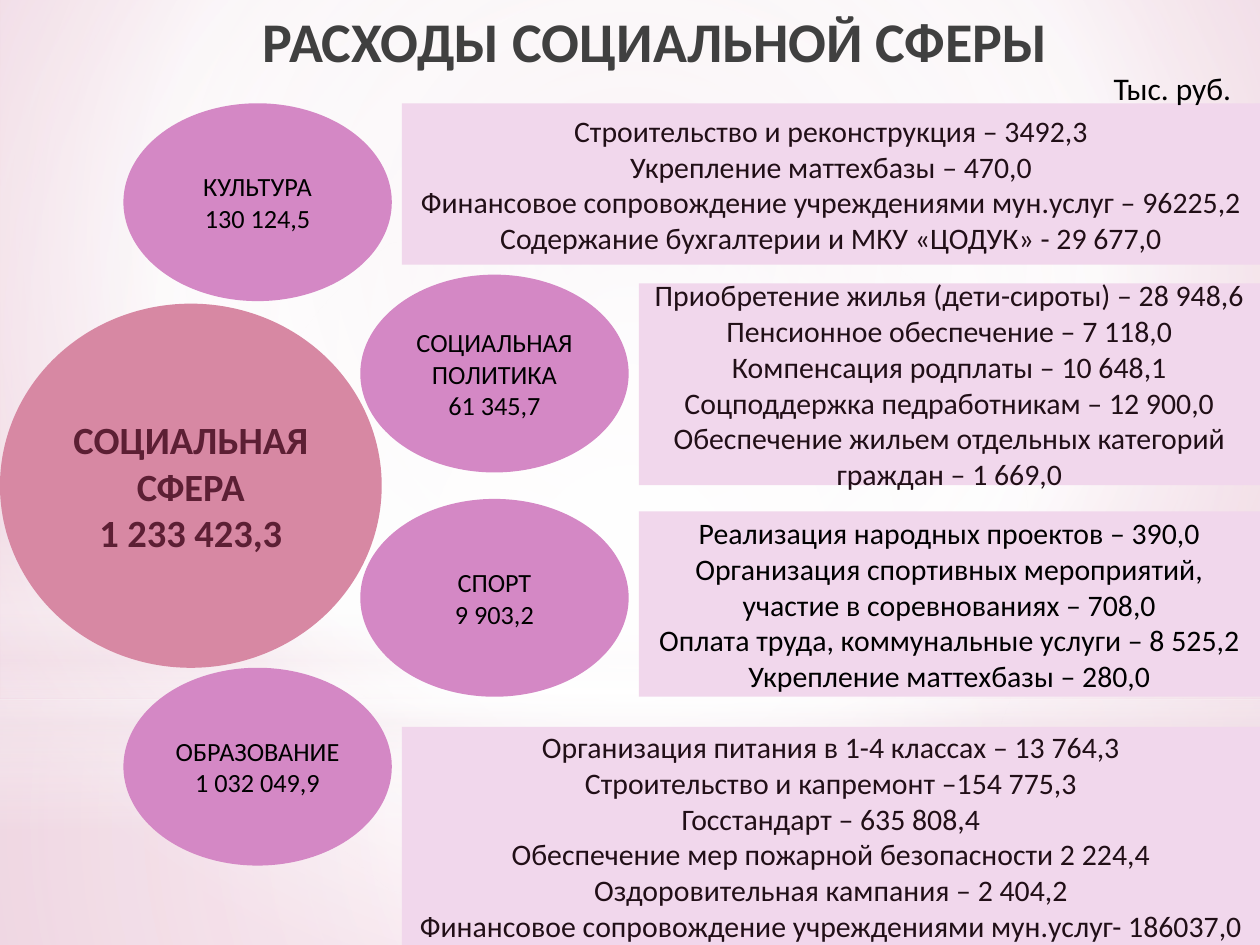
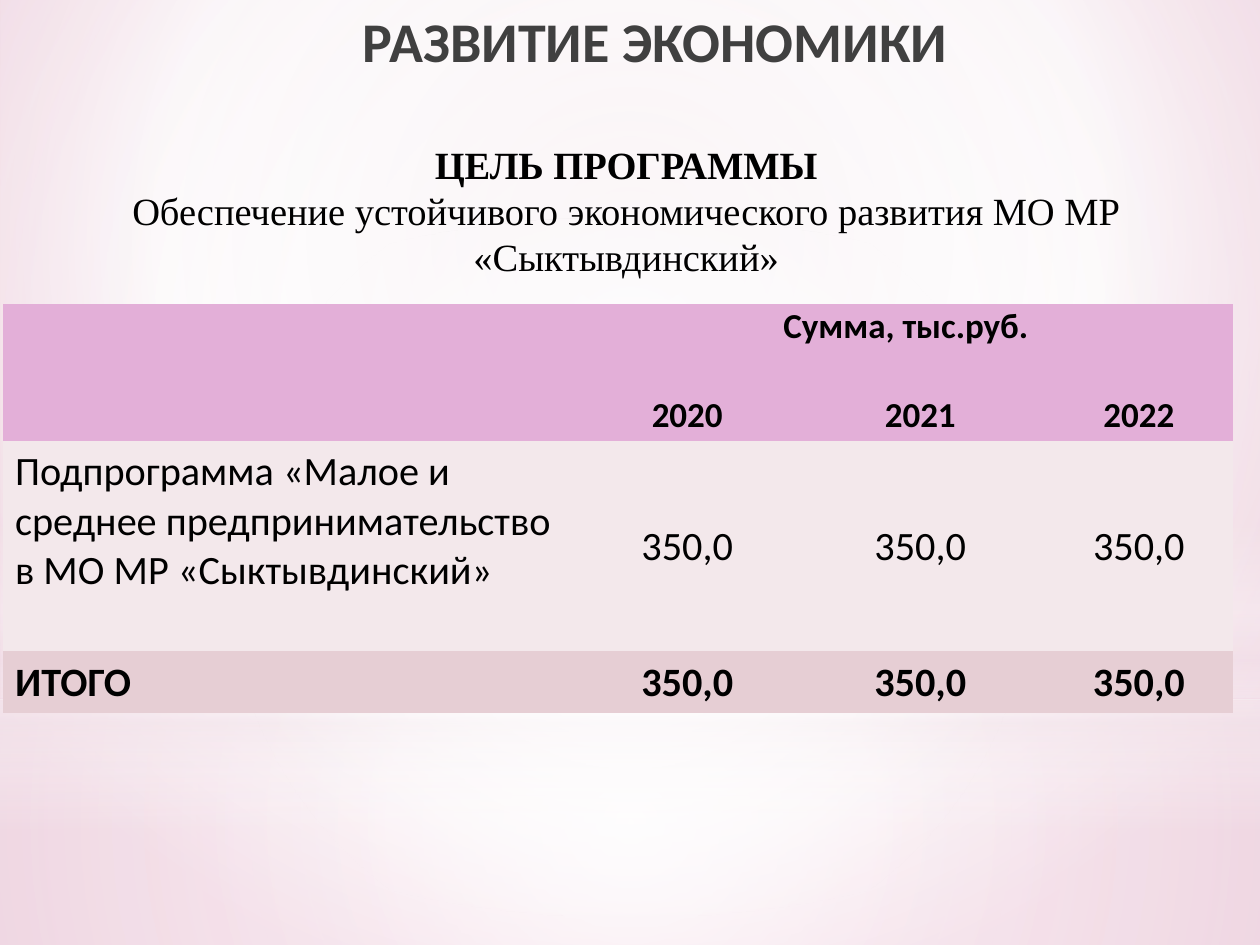
from collections import namedtuple

from pptx import Presentation
from pptx.dml.color import RGBColor
from pptx.enum.shapes import MSO_SHAPE as Form
from pptx.enum.text import MSO_ANCHOR as Anchor, PP_ALIGN as Align
from pptx.oxml import parse_xml
from pptx.oxml.ns import nsdecls, qn
from pptx.util import Inches, Pt

SANS, SERIF = "Calibri", "Times New Roman"
BLACK, GREY, INK, WINE = "000000", "404040", "210F17", "5C1F34"
ROSE, ORCHID, BLUSH = "D788A3", "D488C5", "F1D7EC"
HEAD, BODY, TOTAL = "E3AFD8", "F3E8EB", "E6CED4"
WHITE, HAZE = "FFFFFF", "F4E7ED"
PLAIN_GRID = "{2D5ABB26-0587-4C30-8999-92F81FD0307C}"


class Box(namedtuple("Box", "x y w h")):
    """A rectangle in inches."""

    def share(self, x, y, w, h):
        """Return the area given as shares of this box."""
        return Box(self.x + x * self.w, self.y + y * self.h, w * self.w, h * self.h)

    def emu(self):
        return [Inches(v) for v in self]


PAGE = Box(0, 0, 10, 7.5)
BUBBLE = (2.13, 1.57)
REACH = 2.21  # from the left of a bubble to its panel

# Backdrop layers: form, top and height as shares, stops, centred or vertical
LAYERS = [
    (Form.RECTANGLE, 0.74, 0.26, [(0, WHITE, 91), (37, WHITE, 76), (100, HAZE, 79)], True),
    (Form.RECTANGLE, 0, 0.74, [(0, WHITE, 89), (48, WHITE, 62), (100, HAZE, 79)], True),
    (Form.RECTANGLE, 0.55, 0.33, [(0, WHITE, 0), (29, WHITE, 30), (45, HAZE, 40),
                                  (55, WHITE, 26), (65, HAZE, 60), (100, WHITE, 0)], False),
    (Form.OVAL, 0.23, 0.74, [(0, WHITE, 100), (56, WHITE, 0)], True),
]

# Left, top, bubble lines, panel drop, panel height, panel ink, panel lines
BRANCHES = [
    (0.98, 0.82, ["КУЛЬТУРА", "130 124,5"], 0, 1.28, INK, [
        "Строительство и реконструкция – 3492,3",
        "Укрепление маттехбазы – 470,0",
        "Финансовое сопровождение учреждениями мун.услуг – 96225,2",
        "Содержание бухгалтерии и МКУ «ЦОДУК» - 29 677,0"]),
    (2.86, 2.18, ["СОЦИАЛЬНАЯ ПОЛИТИКА", "61 345,7"], 0.07, 1.6, INK, [
        "Приобретение жилья (дети-сироты) – 28 948,6",
        "Пенсионное обеспечение – 7 118,0",
        "Компенсация родплаты – 10 648,1",
        "Соцподдержка педработникам – 12 900,0",
        "Обеспечение жильем отдельных категорий граждан – 1 669,0"]),
    (2.86, 3.96, ["СПОРТ", "9 903,2"], 0.1, 1.47, BLACK, [
        "Реализация народных проектов – 390,0",
        "Организация спортивных мероприятий, участие в соревнованиях – 708,0",
        "Оплата труда, коммунальные услуги – 8 525,2",
        "Укрепление маттехбазы – 280,0"]),
    (0.98, 5.3, ["ОБРАЗОВАНИЕ 1 032 049,9"], 0.47, 1.73, INK, [
        "Организация питания в 1-4 классах – 13 764,3",
        "Строительство и капремонт –154 775,3",
        "Госстандарт – 635 808,4",
        "Обеспечение мер пожарной безопасности 2 224,4",
        "Оздоровительная кампания – 2 404,2",
        "Финансовое сопровождение учреждениями мун.услуг- 186037,0"]),
]

ROWS = [
    ["", "Сумма, тыс.руб.", "", ""],
    ["", "2020", "2021", "2022"],
    ["Подпрограмма «Малое и среднее предпринимательство в МО МР «Сыктывдинский»"]
    + ["350,0"] * 3,
    ["ИТОГО"] + ["350,0"] * 3,
]
# Height, fill, text size, bold
STYLES = [(0.67, HEAD, 20, True), (0.42, HEAD, 20, True),
          (1.67, BODY, 23, False), (0.49, TOTAL, 23, True)]
COLS = [4.57, 1.73, 1.97, 1.5]


def tint(code):
    return RGBColor.from_string(code)


def blend(fill, node, stops, rect=None):
    """Give a fill a gradient: round into rect (l, t, r, b in %), else vertical."""
    fill.solid()
    marks = "".join(
        f'<a:gs pos="{pos * 1000}"><a:srgbClr val="{code}">'
        f'<a:alpha val="{alpha * 1000}"/></a:srgbClr></a:gs>'
        for pos, code, alpha in stops)
    if rect:
        sides = " ".join(f'{side}="{v * 1000}"' for side, v in zip("ltrb", rect))
        way = f'<a:path path="circle"><a:fillToRect {sides}/></a:path>'
    else:
        way = '<a:lin ang="5400000" scaled="0"/>'
    flat = node.find(".//" + qn("a:solidFill"))
    flat.getparent().replace(flat, parse_xml(
        f'<a:gradFill {nsdecls("a")} rotWithShape="1"><a:gsLst>{marks}</a:gsLst>{way}</a:gradFill>'))


def write(frame, lines, size, ink=BLACK, bold=False, face=SANS,
          align=Align.CENTER, anchor=Anchor.MIDDLE):
    frame.word_wrap = True
    frame.vertical_anchor = anchor
    for i, line in enumerate(lines):
        para = frame.add_paragraph() if i else frame.paragraphs[0]
        para.alignment = align
        run = para.add_run()
        run.text = line
        font = run.font
        font.name, font.size, font.bold = face, Pt(size), bold
        font.color.rgb = tint(ink)


def shape(slide, form, box):
    item = slide.shapes.add_shape(form, *box.emu())
    item.shadow.inherit = False
    item.line.fill.background()
    return item


def block(slide, form, box, fill, lines, size, ink, bold=False):
    item = shape(slide, form, box)
    item.fill.solid()
    item.fill.fore_color.rgb = tint(fill)
    write(item.text_frame, lines, size, ink, bold)


def label(slide, box):
    return slide.shapes.add_textbox(*box.emu()).text_frame


def backdrop(deck, slide):
    """Paint the master; layers are drawn on the slide, then moved there."""
    master = deck.slide_master
    blend(master.background.fill, master.element,
          [(0, "EDDAE2", 100), (60, WHITE, 100), (100, "E09DBC", 100)], (20, 10, 20, 60))
    for i, (form, top, high, stops, mid) in enumerate(LAYERS):
        item = shape(slide, form, PAGE.share(0, top, 1, high))
        blend(item.fill, item.element, stops, (50,) * 4 if mid else None)
        item.element.nvSpPr.cNvPr.set("id", str(100 + i))
        master.shapes.element.insert(2 + i, item.element)


def page(deck, title, high):
    slide = deck.slides.add_slide(deck.slide_layouts[5])
    head = slide.shapes.title
    head.left, head.top, head.width, head.height = PAGE.share(0.04, 0, 0.96, high).emu()
    write(head.text_frame, [title], 32, GREY, True, anchor=Anchor.TOP)
    return slide


def branch(slide, box, name, drop, high, ink, lines):
    """Bubble at the top left of the box, panel from REACH to its right side."""
    block(slide, Form.OVAL, Box(box.x, box.y, *BUBBLE), ORCHID, name, 15, BLACK)
    panel = Box(box.x + REACH, box.y + drop, box.w - REACH, high)
    block(slide, Form.RECTANGLE, panel, BLUSH, lines, 17, ink)


def spending(deck):
    slide = page(deck, "РАСХОДЫ СОЦИАЛЬНОЙ СФЕРЫ", 0.1)
    block(slide, Form.OVAL, Box(0, 2.41, 3.03, 2.89), ROSE,
          ["СОЦИАЛЬНАЯ СФЕРА", "1 233 423,3"], 22, WINE, True)
    for left, top, name, drop, high, ink, lines in BRANCHES:
        box = Box(left, top, PAGE.w - left, drop + high)
        branch(slide, box, name, drop, high, ink, lines)
    write(label(slide, Box(8.64, 0.58, 1.33, 0.23)), ["Тыс. руб."], 18)
    return slide


def budget(slide, box):
    frame = slide.shapes.add_table(len(ROWS), len(COLS), *box.emu())
    frame.element.find(".//" + qn("a:tableStyleId")).text = PLAIN_GRID
    table = frame.table
    for col, wide in zip(table.columns, COLS):
        col.width = Inches(wide)
    for r, (texts, (high, fill, size, bold)) in enumerate(zip(ROWS, STYLES)):
        table.rows[r].height = Inches(high)
        for c, text in enumerate(texts):
            cell = table.cell(r, c)
            cell.fill.solid()
            cell.fill.fore_color.rgb = tint(fill)
            if c:
                cell.margin_left = cell.margin_right = cell.margin_top = Inches(0.01)
                cell.margin_bottom = 0
            if text:
                write(cell.text_frame, [text], size, bold=bold,
                      align=Align.CENTER if c else Align.LEFT)
                cell.vertical_anchor = Anchor.MIDDLE if r and c else Anchor.TOP
    table.cell(0, 0).merge(table.cell(1, 0))
    table.cell(0, 1).merge(table.cell(0, 3))


def economy(deck):
    slide = page(deck, "РАЗВИТИЕ ЭКОНОМИКИ", 0.17)
    budget(slide, Box(0.02, 2.41, sum(COLS), sum(s[0] for s in STYLES)))
    goal = label(slide, Box(0, 1.07, 9.94, 1.21))
    write(goal, ["ЦЕЛЬ ПРОГРАММЫ",
                 "Обеспечение устойчивого экономического развития МО МР «Сыктывдинский»"],
          22, face=SERIF, anchor=Anchor.TOP)
    goal.paragraphs[0].runs[0].font.bold = True


def main():
    deck = Presentation()
    deck.slide_width, deck.slide_height = Inches(PAGE.w), Inches(PAGE.h)
    backdrop(deck, spending(deck))
    economy(deck)
    deck.save("out.pptx")


if __name__ == "__main__":
    main()
